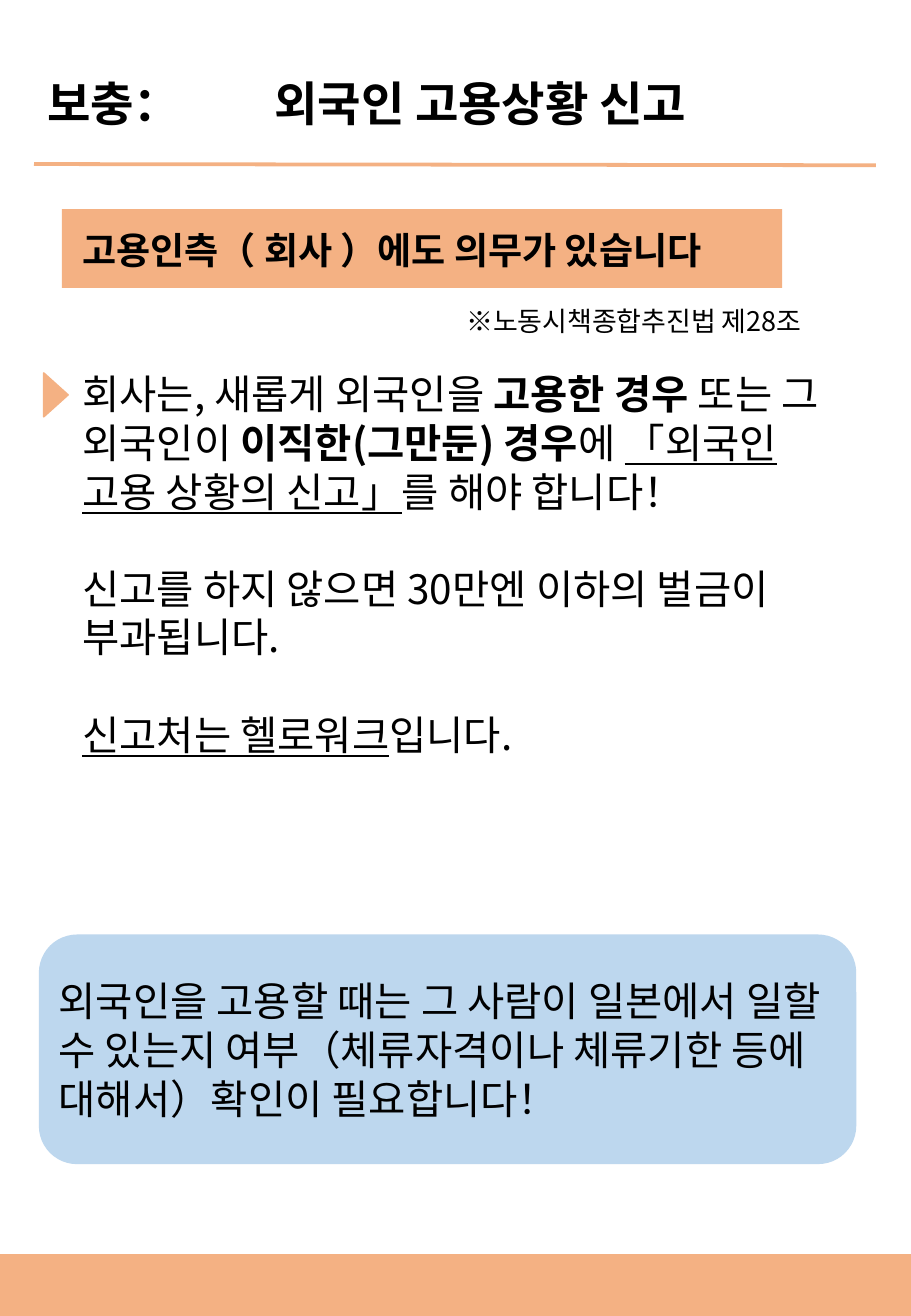
import pptx
import pptx.dml.color
import pptx.enum.shapes
import pptx.enum.text
import pptx.oxml.ns
import pptx.util
from lxml import etree
from pptx.util import Inches

COLORS = {"orange": "F4B183", "blue": "BDD7EE", "text": "000000"}
FONT = "Noto Sans CJK KR"
LINE_FACTOR = 1.2
PRESETS = pptx.enum.shapes.MSO_SHAPE


def color(name):
    return pptx.dml.color.RGBColor.from_string(COLORS[name])


def add_child(parent, tag, **attributes):
    return etree.SubElement(parent, pptx.oxml.ns.qn(tag), attributes)


def write_paragraphs(frame, paragraphs, size, bold=None):
    """Fill a frame with paragraphs, each a list of (text, style) spans."""
    frame.word_wrap = True
    line_height = pptx.util.Pt(size * LINE_FACTOR)
    for index, spans in enumerate(paragraphs):
        para = frame.add_paragraph() if index else frame.paragraphs[0]
        para.alignment = pptx.enum.text.PP_ALIGN.LEFT
        para.line_spacing = line_height
        if index:
            para.space_before = line_height
        para.font.size = pptx.util.Pt(size)
        para.font.bold = bold
        para.font.name = FONT
        para.font.color.rgb = color("text")
        for text, style in spans:
            span = para.add_run()
            span.text = text
            if style == "bold":
                span.font.bold = True
            elif style == "underline":
                span.font.underline = True
            add_child(span._r.get_or_add_rPr(), "a:ea", typeface=FONT)


def add_text(page, left, top, width, height, paragraphs, size, bold=None):
    box = page.shapes.add_textbox(Inches(left), Inches(top), Inches(width), Inches(height))
    write_paragraphs(box.text_frame, paragraphs, size, bold)
    return box


def add_block(page, preset, left, top, width, height, fill):
    block = page.shapes.add_shape(preset, Inches(left), Inches(top), Inches(width), Inches(height))
    block.shadow.inherit = False
    block.fill.solid()
    block.fill.fore_color.rgb = color(fill)
    block.line.fill.background()
    return block


def add_rule(page, x1, y1, x2, y2):
    rule = page.shapes.add_connector(
        pptx.enum.shapes.MSO_CONNECTOR.STRAIGHT, Inches(x1), Inches(y1), Inches(x2), Inches(y2))
    rule.line.color.rgb = color("orange")
    rule.line.width = pptx.util.Pt(2.25)
    add_child(rule._element.spPr, "a:effectLst")


def add_title(page):
    title = add_text(page, 0.29, 0.56, 6.33, 0.57, [[("보충：\t외국인 고용상황 신고", None)]], 28, True)
    properties = title.text_frame.paragraphs[0]._p.get_or_add_pPr()
    tabs = etree.Element(pptx.oxml.ns.qn("a:tabLst"))
    add_child(tabs, "a:tab", pos=str(Inches(1.87)), algn="l")
    properties.find(pptx.oxml.ns.qn("a:defRPr")).addprevious(tabs)


def add_notice(page):
    notice = add_block(page, PRESETS.ROUNDED_RECTANGLE, 0.32, 7.69, 6.73, 1.89, "blue")
    frame = notice.text_frame
    frame.margin_left = frame.margin_right = Inches(0.07)
    frame.margin_top = frame.margin_bottom = Inches(0.03)
    frame.vertical_anchor = pptx.enum.text.MSO_ANCHOR.MIDDLE
    write_paragraphs(frame, [[(
        "외국인을 고용할 때는 그 사람이 일본에서 일할 수 있는지 여부"
        "（체류자격이나 체류기한 등에 대해서）확인이 필요합니다！", None)]], 24)


def main():
    deck = pptx.Presentation()
    deck.slide_width, deck.slide_height = Inches(7.5), Inches(10.83)
    page = deck.slides.add_slide(deck.slide_layouts[6])

    add_rule(page, 0.28, 1.35, 7.21, 1.36)
    add_text(page, 0.58, 2.99, 6.54, 3.74, [
        [("회사는, 새롭게 외국인을 ", None), ("고용한 경우 ", "bold"),
         ("또는 그 외국인이 ", None), ("이직한(그만둔) 경우", "bold"), ("에 ", None),
         ("「외국인 고용 상황의 신고」", "underline"), ("를 해야 합니다！", None)],
        [("신고를 하지 않으면 30만엔 이하의 벌금이 부과됩니다.", None)],
        [("신고처는 헬로워크", "underline"), ("입니다.", None)],
    ], 24)
    add_block(page, PRESETS.RECTANGLE, 0.51, 1.72, 5.93, 0.65, "orange")
    add_text(page, 0.58, 1.82, 6.04, 0.47,
             [[("고용인측（ 회사 ）에도 의무가 있습니다", None)]], 22, True)
    add_notice(page)
    marker = add_block(page, PRESETS.ISOSCELES_TRIANGLE, 0.28, 3.15, 0.36, 0.2, "orange")
    marker.rotation = 90
    add_title(page)
    add_text(page, 3.74, 2.46, 3.47, 0.37, [[("※노동시책종합추진법 제28조", None)]], 16)
    footer = add_block(page, PRESETS.RECTANGLE, 0, 10.33, 7.5, 0.5, "orange")
    for outlined, width in ((marker, 1), (footer, 1)):
        outlined.line.color.rgb = color("orange")
        outlined.line.width = pptx.util.Pt(width)
    deck.save("out.pptx")


if __name__ == "__main__":
    main()
